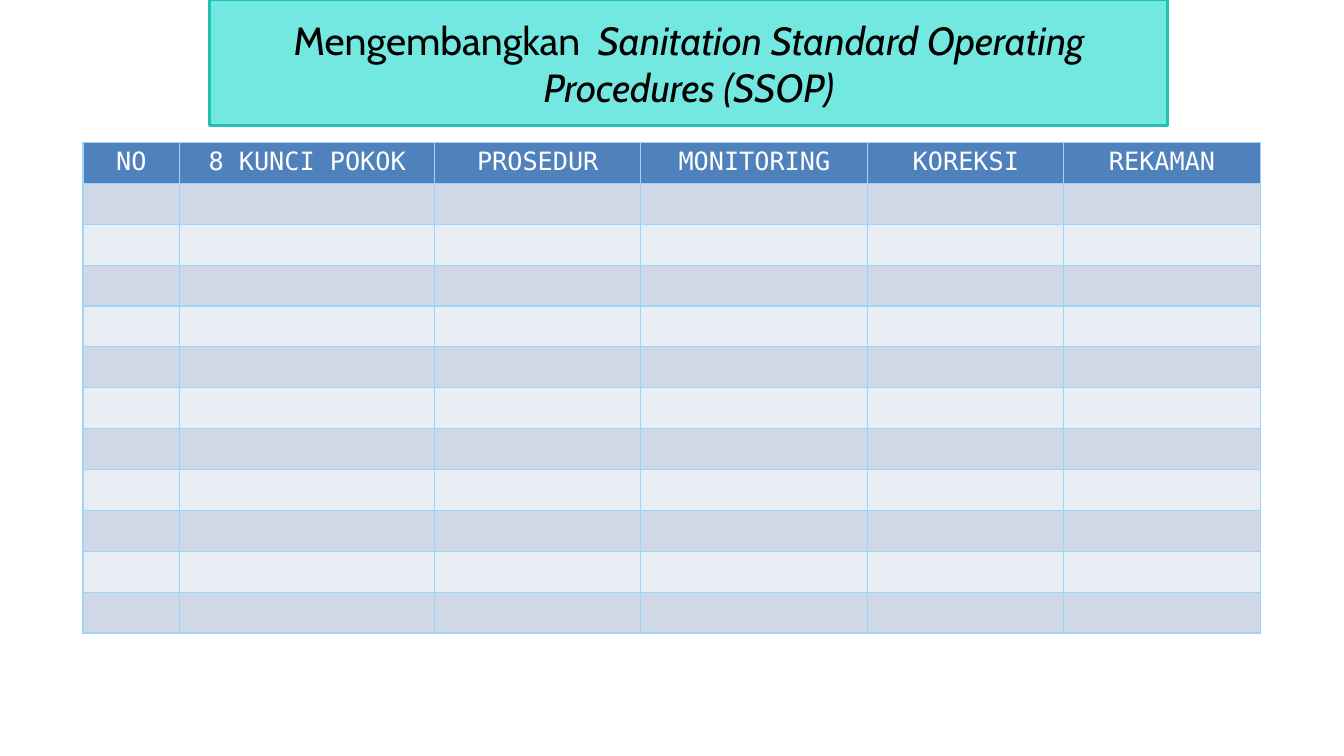
from dataclasses import dataclass

from lxml.etree import SubElement
from pptx import Presentation
from pptx.dml.color import RGBColor
from pptx.enum.shapes import MSO_SHAPE
from pptx.enum.text import MSO_ANCHOR, PP_ALIGN
from pptx.oxml.ns import qn
from pptx.slide import Slide
from pptx.table import _Cell
from pptx.text.text import _Paragraph
from pptx.util import Cm, Pt


@dataclass(frozen=True)
class Column:
    heading: str
    width: float


COLUMNS = [
    Column("NO", 2.44),
    Column("8 KUNCI POKOK", 6.42),
    Column("PROSEDUR", 5.2),
    Column("MONITORING", 5.72),
    Column("KOREKSI", 4.94),
    Column("REKAMAN", 4.95),
]
BODY_ROWS = 11
ROW_HEIGHT = 1.03
HEADER_FILL = "4F81BD"
BAND_FILLS = ["E9EDF4", "D0D8E8"]
BORDER_COLOR = "9BD5FA"


def color(value: str) -> RGBColor:
    return RGBColor.from_string(value)


def add_text(paragraph: _Paragraph, text: str, *, font: str, size: float,
             fill: str, italic: bool = False) -> None:
    paragraph.alignment = PP_ALIGN.CENTER
    run = paragraph.add_run()
    run.text = text
    run.font.name = font
    run.font.size = Pt(size)
    run.font.italic = italic
    run.font.color.rgb = color(fill)


def format_cell(cell: _Cell, fill: str) -> None:
    properties = cell._tc.get_or_add_tcPr()
    for side in ("a:lnL", "a:lnR", "a:lnT", "a:lnB"):
        line = SubElement(properties, qn(side), w=str(Pt(1)))
        solid = SubElement(line, qn("a:solidFill"))
        SubElement(solid, qn("a:srgbClr"), val=BORDER_COLOR)
    cell.fill.solid()
    cell.fill.fore_color.rgb = color(fill)


def add_title(slide: Slide) -> None:
    shape = slide.shapes.add_shape(
        MSO_SHAPE.ROUND_2_DIAG_RECTANGLE, Cm(5.29), Cm(0), Cm(24.13), Cm(3.17))
    shape.adjustments[0] = 0
    shape.adjustments[1] = 0
    shape.shadow.inherit = False
    shape.fill.solid()
    shape.fill.fore_color.rgb = color("72E8E0")
    shape.line.color.rgb = color("20C2B6")
    shape.line.width = Pt(2)
    frame = shape.text_frame
    frame.word_wrap = True
    frame.vertical_anchor = MSO_ANCHOR.MIDDLE
    paragraph = frame.paragraphs[0]
    add_text(paragraph, "Mengembangkan  ", font="Cabin", size=28, fill="000000")
    add_text(paragraph, "Sanitation Standard Operating Procedures (SSOP)",
             font="Cabin", size=28, fill="000000", italic=True)


def add_procedure_table(slide: Slide) -> None:
    row_count = BODY_ROWS + 1
    width = sum(column.width for column in COLUMNS)
    shape = slide.shapes.add_table(
        row_count, len(COLUMNS), Cm(2.09), Cm(3.59), Cm(width), Cm(ROW_HEIGHT * row_count))
    table = shape.table
    for row_index, row in enumerate(table.rows):
        row.height = Cm(ROW_HEIGHT)
        fill = BAND_FILLS[row_index % 2] if row_index else HEADER_FILL
        for cell in row.cells:
            format_cell(cell, fill)
    for index, column in enumerate(COLUMNS):
        table.columns[index].width = Cm(column.width)
        add_text(table.cell(0, index).text_frame.paragraphs[0], column.heading,
                 font="DejaVu Sans Mono", size=18, fill="FFFFFF")


def main() -> None:
    presentation = Presentation()
    presentation.slide_width = Cm(33.87)
    presentation.slide_height = Cm(19.05)
    slide = presentation.slides.add_slide(presentation.slide_layouts[6])
    add_title(slide)
    add_procedure_table(slide)
    presentation.save("out.pptx")


if __name__ == "__main__":
    main()
